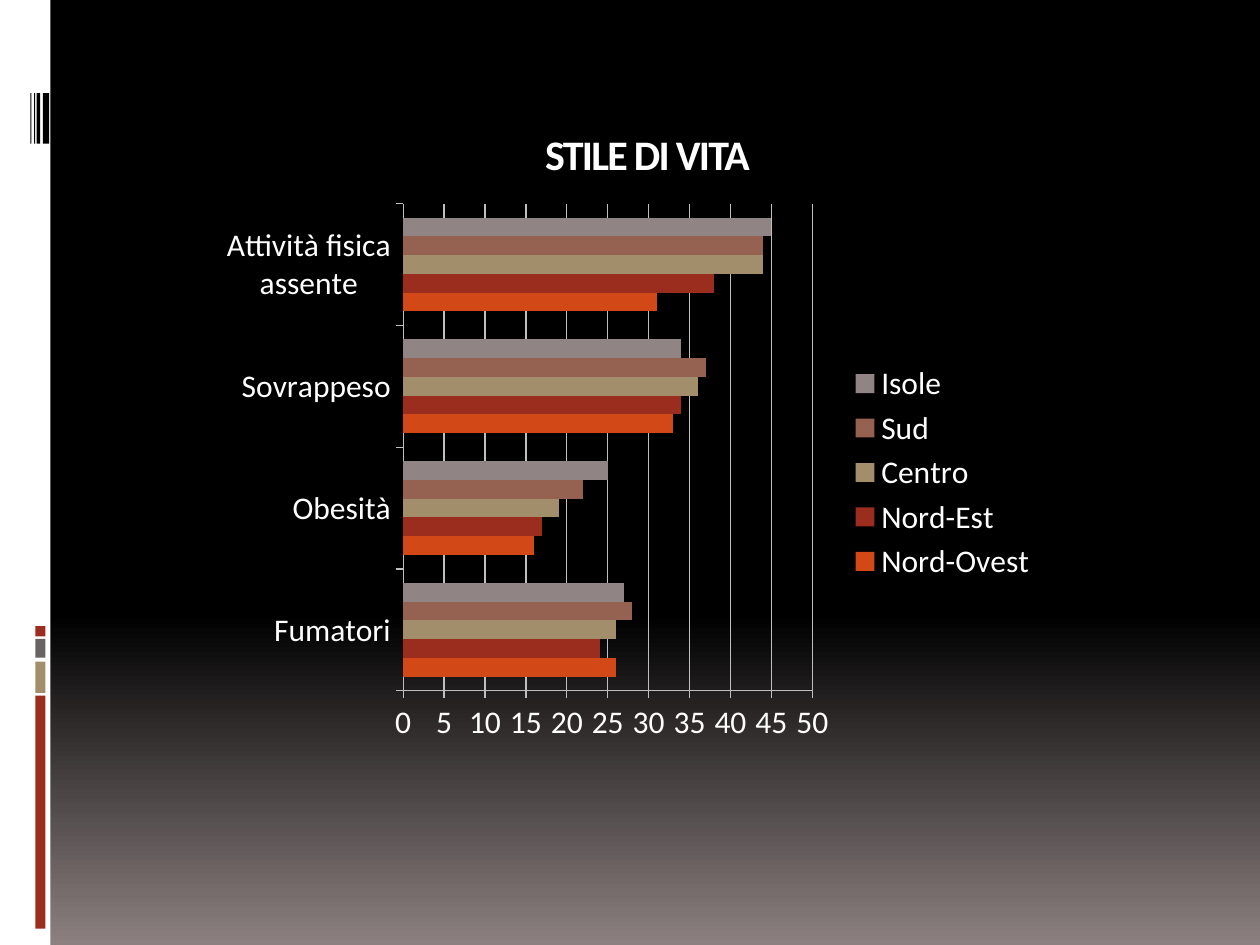
from copy import deepcopy

from pptx import Presentation
from pptx.chart.data import CategoryChartData
from pptx.dml.color import RGBColor
from pptx.enum.chart import XL_CHART_TYPE, XL_LEGEND_POSITION, XL_TICK_MARK
from pptx.enum.shapes import MSO_SHAPE
from pptx.enum.text import MSO_ANCHOR, PP_ALIGN
from pptx.oxml.ns import qn
from pptx.util import Pt

RECTANGLE = MSO_SHAPE.RECTANGLE
BAR_CLUSTERED = XL_CHART_TYPE.BAR_CLUSTERED
LEGEND_RIGHT = XL_LEGEND_POSITION.RIGHT
TICK_OUTSIDE = XL_TICK_MARK.OUTSIDE
BOTTOM = MSO_ANCHOR.BOTTOM
CENTER = PP_ALIGN.CENTER

FONT = "Calibri"
WHITE, BLACK, RED, SAND, GREY = "FFFFFF", "000000", "9B2D1F", "A28E6A", "696464"
GRID_COLOR = "BFBFBF"

BACKGROUND_STOPS = [(0, BLACK), (0.65, BLACK), (1, "8C8080")]
# Top and height of each block, as points from the top of the side band
COLOR_BLOCKS = [(397.44, 133.2, RED), (378, 18, SAND),
                (365.04, 10.8, GREY), (357.84, 5.76, RED)]
# Left and width of each stripe, as points from the left of the side band
BARCODE_STRIPES = [(24.48, 3.6), (20.88, 2.16), (19.44, 0.72), (17.28, 0.72)]

CATEGORIES = ["Fumatori", "Obesità", "Sovrappeso", "Attività fisica assente"]
AREAS = [
    ("Nord-Ovest", (26, 16, 33, 31), "D34817"),
    ("Nord-Est", (24, 17, 34, 38), RED),
    ("Centro", (26, 19, 36, 44), SAND),
    ("Sud", (28, 22, 37, 44), "956251"),
    ("Isole", (27, 25, 34, 45), "918485"),
]


def rgb(color):
    return RGBColor.from_string(color)


def paint_background(slide):
    fill = slide.background.fill
    fill.gradient()
    fill.gradient_angle = 270
    stop_list = slide.element.find(".//" + qn("a:gsLst"))
    stop_list.insert(1, deepcopy(stop_list[0]))
    for stop, (position, color) in zip(fill.gradient_stops, BACKGROUND_STOPS):
        stop.position = position
        stop.color.rgb = rgb(color)


def add_block(slide, left, top, width, height, color):
    block = slide.shapes.add_shape(
        RECTANGLE, Pt(left), Pt(top), Pt(width), Pt(height))
    block.shadow.inherit = False
    block.fill.solid()
    block.fill.fore_color.rgb = rgb(color)
    block.line.fill.background()


def add_side_band(slide, left, top, width, height):
    add_block(slide, left, top, width, height, WHITE)
    for offset, block_height, color in COLOR_BLOCKS:
        add_block(slide, left + 20.16, top + offset, 5.76, block_height, color)
    for offset, stripe_width in BARCODE_STRIPES:
        add_block(slide, left + offset, top + 53.28, stripe_width, 28.8, BLACK)


def add_title(slide, left, top, width, height):
    title = slide.shapes.add_textbox(
        Pt(left), Pt(top), Pt(width), Pt(height))
    frame = title.text_frame
    frame.word_wrap = True
    frame.vertical_anchor = BOTTOM
    frame.text = "STILE DI VITA"
    paragraph = frame.paragraphs[0]
    paragraph.alignment = CENTER
    run = paragraph.runs[0]
    run.font.name = FONT
    run.font.size = Pt(24)
    run.font.bold = True
    run.font.color.rgb = rgb(WHITE)
    run._r.get_or_add_rPr().set("spc", "-100")


def add_lifestyle_chart(slide, left, top, width, height):
    data = CategoryChartData()
    data.categories = CATEGORIES
    for area, values, _ in AREAS:
        data.add_series(area, values)
    chart = slide.shapes.add_chart(
        BAR_CLUSTERED, Pt(left), Pt(top), Pt(width), Pt(height), data).chart
    chart.has_title = False
    chart.font.name = FONT
    chart.font.size = Pt(18)
    chart.font.color.rgb = rgb(WHITE)

    chart.has_legend = True
    chart.legend.position = LEGEND_RIGHT
    chart.legend.include_in_layout = False

    plot = chart.plots[0]
    plot.gap_width = 150
    plot.vary_by_categories = False
    for series, (_, _, color) in zip(plot.series, AREAS):
        series.format.fill.solid()
        series.format.fill.fore_color.rgb = rgb(color)

    value_axis = chart.value_axis
    value_axis.minimum_scale = 0
    value_axis.maximum_scale = 50
    value_axis.major_unit = 5
    value_axis.has_major_gridlines = True
    for axis in (chart.category_axis, value_axis):
        axis.major_tick_mark = TICK_OUTSIDE
    for ruled in (chart.category_axis, value_axis, value_axis.major_gridlines):
        ruled.format.line.color.rgb = rgb(GRID_COLOR)
        ruled.format.line.width = Pt(0.75)


def main():
    presentation = Presentation()
    presentation.slide_width = Pt(720)
    presentation.slide_height = Pt(540)
    slide = presentation.slides.add_slide(presentation.slide_layouts[6])
    paint_background(slide)
    add_side_band(slide, 0, 0, 28.8, 540)
    add_title(slide, 64, 54.72, 612, 51.12)
    add_lifestyle_chart(slide, 120, 110, 480, 320)
    presentation.save("out.pptx")


if __name__ == "__main__":
    main()
